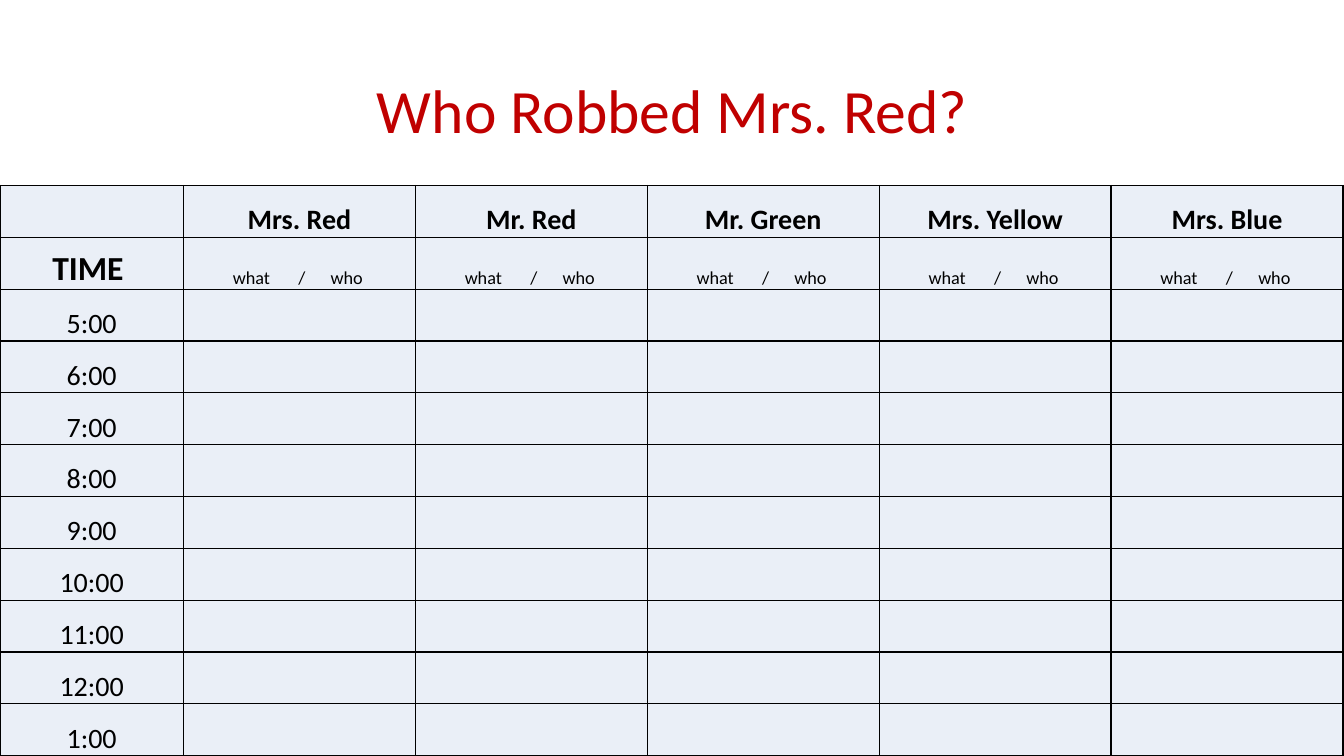
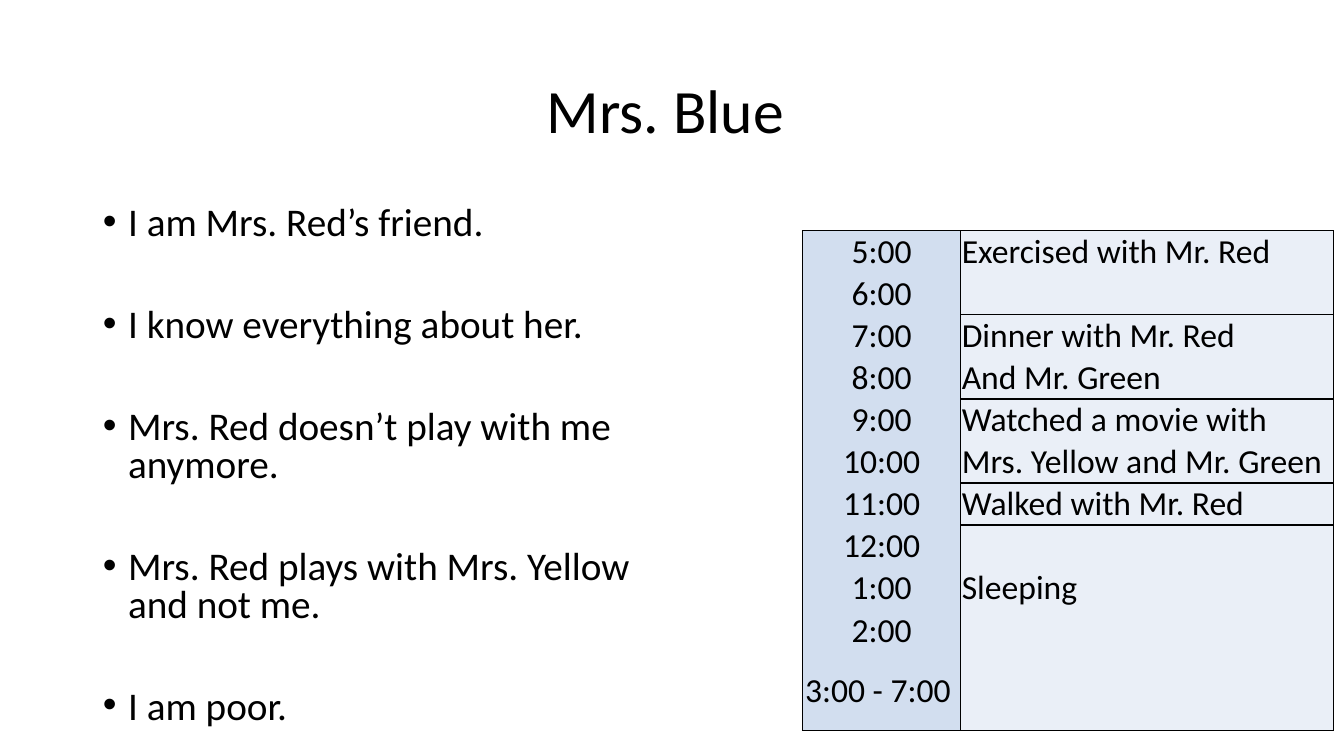
from dataclasses import dataclass

from lxml.etree import SubElement as Sub
from pptx import Presentation
from pptx.dml.color import RGBColor as Rgb
from pptx.enum.text import MSO_ANCHOR as Anchor, MSO_AUTO_SIZE as Fit, PP_ALIGN as Align
from pptx.oxml.ns import qn
from pptx.util import Inches, Pt

FONT = "Calibri"
BLACK, RED = "000000", "C00000"
PALE, BLUE = "EAEFF7", "D2DEEF"
SIDES = "LRTB"
PAD = 0.01
HOURS = [f"{hour}:00" for hour in (*range(5, 13), 1, 2)]


@dataclass(frozen=True)
class Cell:
    text: str = ""
    size: float = 20
    bold: bool = False
    align: Align = Align.CENTER
    anchor: Anchor = Anchor.BOTTOM
    fill: str = PALE
    sides: str = SIDES
    left: float = PAD
    tabs: tuple[float, ...] = ()


def color(code: str) -> Rgb:
    return Rgb.from_string(code)


def style(par, size: float, code: str = BLACK, bold: bool = False) -> None:
    font = par.font
    font.name, font.size, font.bold = FONT, Pt(size), bold
    font.color.rgb = color(code)


def place(shape, left: float, top: float, width: float, height: float) -> None:
    shape.left, shape.top = Inches(left), Inches(top)
    shape.width, shape.height = Inches(width), Inches(height)


def add_slide(deck, layout: int, title: str, code: str = BLACK):
    slide = deck.slides.add_slide(deck.slide_layouts[layout])
    shape = slide.shapes.title
    place(shape, 0.92, 0.4, 11.5, 1.45)
    frame = shape.text_frame
    frame.text = title
    frame.auto_size, frame.vertical_anchor = Fit.NONE, Anchor.MIDDLE
    par = frame.paragraphs[0]
    par.alignment, par.line_spacing = Align.CENTER, 0.9
    style(par, 44, code)
    return slide


def edge(cell, sides: str) -> None:
    """Rule the given sides in black and clear the others."""
    props = cell._tc.get_or_add_tcPr()
    for side in SIDES:
        line = Sub(props, qn(f"a:ln{side}"), w=str(Pt(1)))
        if side in sides:
            Sub(Sub(line, qn("a:solidFill")), qn("a:srgbClr"), val=BLACK)
        else:
            Sub(line, qn("a:noFill"))


def set_tabs(par, stops: tuple[float, ...]) -> None:
    tabs = Sub(par._p.get_or_add_pPr(), qn("a:tabLst"))
    for stop in stops:
        Sub(tabs, qn("a:tab"), pos=str(Inches(stop)), algn="l")


def fill_cell(cell, item: Cell) -> None:
    edge(cell, item.sides)
    cell.fill.solid()
    cell.fill.fore_color.rgb = color(item.fill)
    cell.margin_left = Inches(item.left)
    cell.margin_right = cell.margin_top = Inches(PAD)
    cell.margin_bottom = 0
    cell.vertical_anchor = item.anchor
    cell.text = item.text
    par = cell.text_frame.paragraphs[0]
    par.alignment = item.align
    if item.tabs:
        set_tabs(par, item.tabs)
    style(par, item.size, bold=item.bold)


def add_grid(slide, left: float, top: float, cols: list[float],
             rows: list[float], cells: list[list[Cell]]) -> None:
    box = [Inches(n) for n in (left, top, sum(cols), sum(rows))]
    table = slide.shapes.add_table(len(rows), len(cols), *box).table
    table.first_row = table.horz_banding = False
    for col, width in zip(table.columns, cols):
        col.width = Inches(width)
    for row, height, items in zip(table.rows, rows, cells):
        row.height = Inches(height)
        for cell, item in zip(row.cells, items):
            fill_cell(cell, item)


def add_list(slide, lines: list[str]) -> None:
    body = slide.placeholders[1]
    place(body, 0.92, 2, 5.88, 5.5)
    frame = body.text_frame
    frame.text = "\n".join(lines)
    frame.auto_size = Fit.NONE
    for par in frame.paragraphs:
        props = par._p.get_or_add_pPr()
        props.set("marL", str(Inches(0.25)))
        props.set("indent", str(Inches(-0.25)))
        par.line_spacing = 0.8
        par.space_before, par.space_after = Pt(10), Pt(36)
        style(par, 28)


def add_clues(deck) -> None:
    slide = add_slide(deck, 5, "Who Robbed Mrs. Red?", RED)
    names = ["Mrs. Red", "Mr. Red", "Mr. Green", "Mrs. Yellow", "Mrs. Blue"]
    count = len(names)
    label = Cell("what\t/\twho", 13, align=Align.LEFT, left=0.49, tabs=(0.65, 0.97))
    cells = [
        [Cell(), *(Cell(name, bold=True) for name in names)],
        [Cell("TIME ", 24, bold=True)] + [label] * count,
        *([Cell(hour)] + [Cell()] * count for hour in HOURS[:9]),
    ]
    rows = [5.66 / len(cells)] * len(cells)
    add_grid(slide, 0, 1.84, [1.82] + [2.3] * count, rows, cells)


def add_person(deck) -> None:
    slide = add_slide(deck, 1, "Mrs. Blue ")
    add_list(slide, [
        "I am Mrs. Red’s friend.",
        "I know everything about her.",
        "Mrs. Red doesn’t play with me anymore.",
        "Mrs. Red plays with Mrs. Yellow and not me.",
        "I am poor.",
    ])
    hours = [*HOURS, "3:00 - 7:00 "]
    blocks = [
        ["Exercised with Mr. Red", ""],
        ["Dinner with Mr. Red", "And Mr. Green"],
        ["Watched a movie with", "Mrs. Yellow and Mr. Green"],
        ["Walked with Mr. Red"],
        ["", "Sleeping", "", ""],
    ]

    def sides(index: int, count: int) -> str:
        """Frame a block of cells without rules inside it."""
        return "LR" + "T" * (index == 0) + "B" * (index == count - 1)

    times = [Cell(hour, 24, anchor=Anchor.MIDDLE, fill=BLUE, sides=sides(i, len(hours)))
             for i, hour in enumerate(hours)]
    deeds = [Cell(text, 24, align=Align.LEFT, sides=sides(i, len(block)))
             for block in blocks for i, text in enumerate(block)]
    rows = [0.41] * len(HOURS) + [0.79]
    cells = [list(pair) for pair in zip(times, deeds)]
    add_grid(slide, 7.96, 2.29, [1.57, 3.7], rows, cells)


def main() -> None:
    deck = Presentation()
    deck.slide_width, deck.slide_height = Inches(13.33), Inches(7.5)
    add_clues(deck)
    add_person(deck)
    deck.save("out.pptx")


if __name__ == "__main__":
    main()
